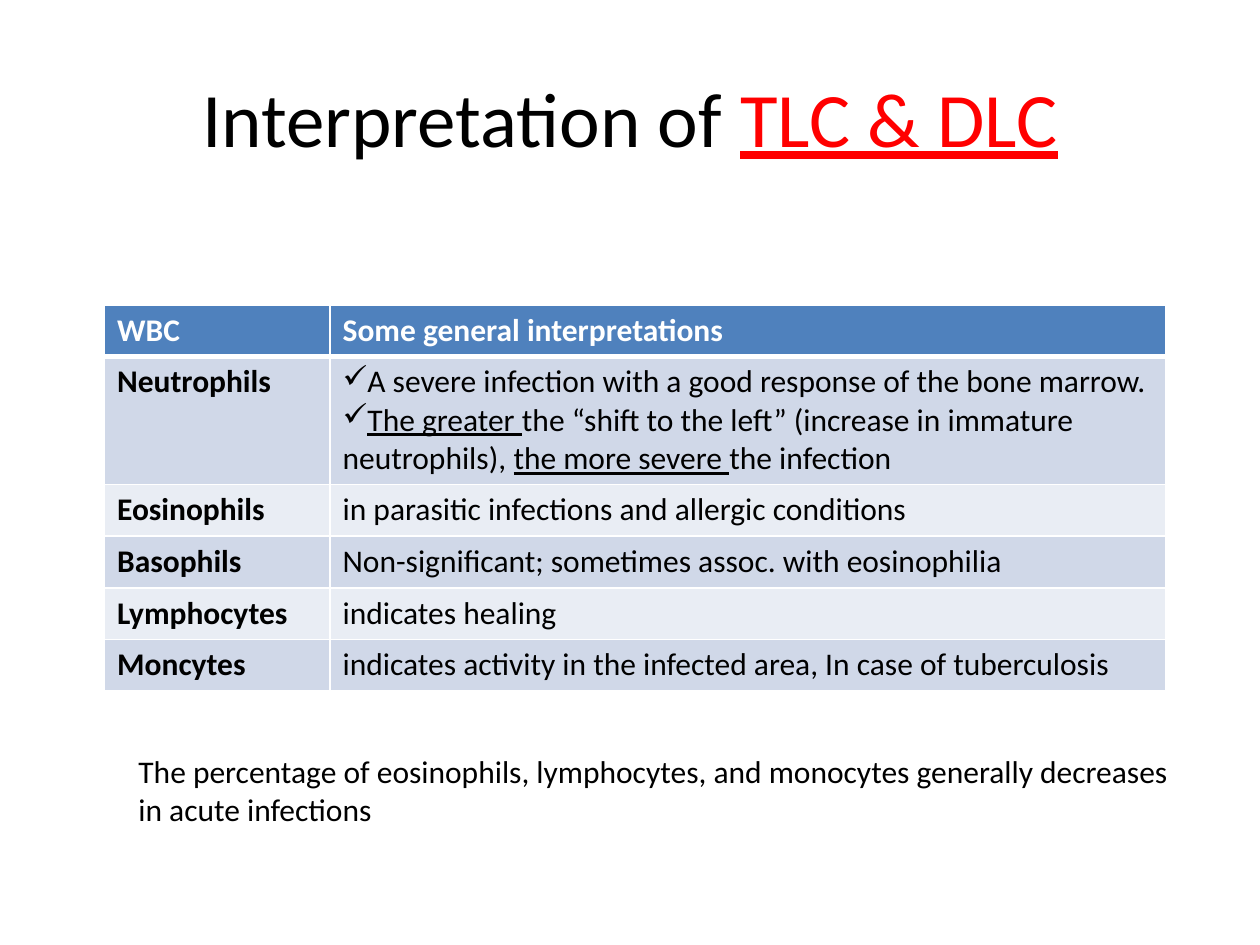
import pptx
import pptx.util
import pptx.dml.color
import pptx.enum.text
import pptx.oxml
import pptx.oxml.ns

Inches, Pt = pptx.util.Inches, pptx.util.Pt

# Content: a paragraph is a list of (text, format) runs
COLORS = {"text": "000000", "accent": "FF0000", "white": "FFFFFF",
          "header": "4F81BD", "odd": "D0D8E8", "even": "E9EDF4"}
UNDERLINED = {"underline": True}
TITLE = [("Interpretation of ", {}),
         ("TLC & DLC", {"color": "accent", "underline": True})]
HEADER = ("WBC", "Some general interpretations")
CELLS = [
    ("Neutrophils", [
        [("A severe infection with a good response of the bone marrow.", {})],
        [("The greater ", UNDERLINED),
         ("the “shift to the left” (increase in immature neutrophils), ", {}),
         ("the more severe ", UNDERLINED),
         ("the infection", {})]]),
    ("Eosinophils", "in parasitic infections and allergic conditions"),
    ("Basophils", "Non-significant; sometimes assoc. with eosinophilia"),
    ("Lymphocytes", "indicates healing"),
    ("Moncytes", "indicates activity in the infected area, In case of tuberculosis"),
]
NOTE = ("The percentage of eosinophils, lymphocytes, and monocytes "
        "generally decreases in acute infections")

# Layout in inches
TITLE_BOX = (0.5, 0.3, 9, 1.25)
NOTE_BOX = (1, 5.92, 8.58, 0.71)
TABLE_ORIGIN = (0.83, 2.42)
COLUMN_WIDTHS = (1.79, 6.63)
ROW_HEIGHT = 0.41
CHECKED_ROW_HEIGHT = 1.01


def rgb(name):
    return pptx.dml.color.RGBColor.from_string(COLORS[name])


def add_runs(paragraph, runs, **base):
    for text, extra in runs:
        run = paragraph.add_run()
        run.text = text
        values = {"name": "Calibri", "size": Pt(18), "color": "text", **base, **extra}
        run.font.color.rgb = rgb(values.pop("color"))
        for key, value in values.items():
            setattr(run.font, key, value)


def add_check(paragraph):
    properties = paragraph._p.get_or_add_pPr()
    properties.set("marL", "0")
    properties.set("indent", "0")
    bullet = pptx.oxml.parse_xml(
        f'<a:buChar {pptx.oxml.ns.nsdecls("a")} char="✓"/>')
    properties.append(bullet)


def set_borders(cell, bottom):
    for side, points in {"L": 1, "R": 1, "T": 1, "B": bottom}.items():
        cell._tc.get_or_add_tcPr().append(pptx.oxml.parse_xml(
            f'<a:ln{side} {pptx.oxml.ns.nsdecls("a")} w="{Pt(points)}"><a:solidFill>'
            f'<a:srgbClr val="{COLORS["white"]}"/></a:solidFill></a:ln{side}>'))


def fill_cell(cell, content, fill, bottom=1, **base):
    set_borders(cell, bottom)
    cell.fill.solid()
    cell.fill.fore_color.rgb = rgb(fill)
    if isinstance(content, str):
        add_runs(cell.text_frame.paragraphs[0], [(content, {})], **base)
        return
    for index, runs in enumerate(content):
        frame = cell.text_frame
        paragraph = frame.add_paragraph() if index else frame.paragraphs[0]
        add_check(paragraph)
        add_runs(paragraph, runs, **base)


def add_table(slide):
    row_heights = [CHECKED_ROW_HEIGHT if row == 1 else ROW_HEIGHT
                   for row in range(len(CELLS) + 1)]
    size = (sum(COLUMN_WIDTHS), sum(row_heights))
    table = slide.shapes.add_table(len(row_heights), len(COLUMN_WIDTHS),
                                   *map(Inches, TABLE_ORIGIN + size)).table
    table.first_col = True
    for column, width in zip(table.columns, COLUMN_WIDTHS):
        column.width = Inches(width)
    for row, height in zip(table.rows, row_heights):
        row.height = Inches(height)
    for column, text in enumerate(HEADER):
        fill_cell(table.cell(0, column), text, "header", bottom=3,
                  color="white", bold=True)
    for row, contents in enumerate(CELLS, 1):
        for column, content in enumerate(contents):
            fill_cell(table.cell(row, column), content,
                      "odd" if row % 2 else "even", bold=column == 0)


def main():
    presentation = pptx.Presentation()
    presentation.slide_width, presentation.slide_height = Inches(10), Inches(7.5)
    slide = presentation.slides.add_slide(presentation.slide_layouts[5])

    # Title
    title = slide.shapes.title
    title.left, title.top, title.width, title.height = map(Inches, TITLE_BOX)
    title.text_frame.vertical_anchor = pptx.enum.text.MSO_ANCHOR.MIDDLE
    paragraph = title.text_frame.paragraphs[0]
    paragraph.alignment = pptx.enum.text.PP_ALIGN.CENTER
    add_runs(paragraph, TITLE, size=Pt(44))

    # Table of cell types
    add_table(slide)

    # Closing note
    note = slide.shapes.add_textbox(*map(Inches, NOTE_BOX)).text_frame
    note.word_wrap = True
    note.auto_size = pptx.enum.text.MSO_AUTO_SIZE.SHAPE_TO_FIT_TEXT
    add_runs(note.paragraphs[0], [(NOTE, {})])

    presentation.save("out.pptx")


if __name__ == "__main__":
    main()
